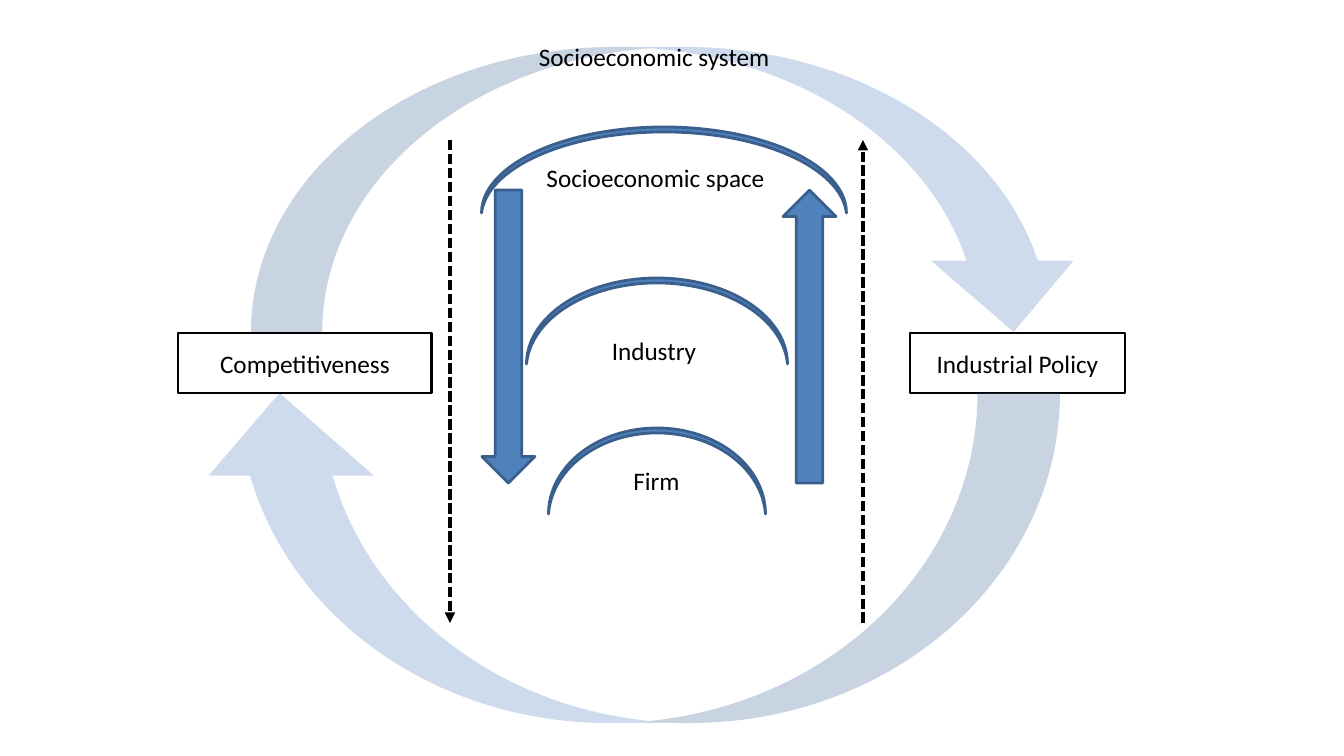
"""Builds a slide of the competitiveness and industrial policy cycle."""
from dataclasses import dataclass

from lxml.etree import SubElement
from pptx import Presentation
from pptx.dml.color import RGBColor
from pptx.enum.dml import MSO_LINE_DASH_STYLE as Dash
from pptx.enum.shapes import MSO_CONNECTOR as Connector, MSO_SHAPE as Shape
from pptx.enum.text import MSO_ANCHOR as Anchor, MSO_AUTO_SIZE as AutoSize, PP_ALIGN as Align
from pptx.oxml.ns import qn
from pptx.util import Emu, Pt


@dataclass(frozen=True)
class Theme:
    """Colours, font and sizes in points."""
    blue: str = "4F81BD"
    edge: str = "3A5F8C"
    ink: str = "000000"
    font: str = "Calibri"
    text_size: int = 18
    outline: float = 2
    dashes: float = 2.5
    cycle_opacity: int = 28


def px(length):
    """Turns whole pixels into EMU."""
    return Emu(round(length * 914400 / 100.8))


def write(frame, text, *, theme, align=Align.CENTER):
    """Writes one formatted paragraph into a text frame."""
    para = frame.paragraphs[0]
    para.alignment = align
    span = para.add_run()
    span.text = text
    span.font.name = theme.font
    span.font.size = Pt(theme.text_size)
    span.font.color.rgb = RGBColor.from_string(theme.ink)


class Canvas:
    """Draws the diagram elements on one slide."""

    def __init__(self, page, theme):
        self.page = page
        self.theme = theme

    def shape(self, kind, left, top, width, height, *, fill=None, line=None, turn=0):
        """Adds a preset shape."""
        box = self.page.shapes.add_shape(kind, px(left), px(top), px(width), px(height))
        box.shadow.inherit = False
        box.rotation = turn
        if fill:
            box.fill.solid()
            box.fill.fore_color.rgb = RGBColor.from_string(fill)
        else:
            box.fill.background()
        if line:
            box.line.color.rgb = RGBColor.from_string(line)
            box.line.width = Pt(self.theme.outline)
        else:
            box.line.fill.background()
        return box

    def arch(self, center, middle, span, rise=86):
        """Adds a thin moon turned into an arch."""
        moon = self.shape(Shape.MOON, center - rise / 2, middle - span / 2, rise, span,
                          fill=self.theme.blue, line=self.theme.edge, turn=90)
        moon.adjustments[0] = 0.057

    def block_arrow(self, left, turn):
        """Adds a solid vertical arrow."""
        self.shape(Shape.DOWN_ARROW, left, 190, 53, 293,
                   fill=self.theme.blue, line=self.theme.edge, turn=turn)

    def cycle_arrow(self, left, top, width, height, turn):
        """Adds a translucent curved arrow."""
        arrow = self.shape(Shape.CURVED_DOWN_ARROW, left, top, width, height,
                           fill=self.theme.blue, turn=turn)
        color = arrow.element.spPr.find(f"{qn('a:solidFill')}/{qn('a:srgbClr')}")
        SubElement(color, qn("a:alpha"), val=str(self.theme.cycle_opacity * 1000))

    def dashed_arrow(self, x, start, end):
        """Adds a dashed vertical line with an arrowhead at its end."""
        arrow = self.page.shapes.add_connector(Connector.STRAIGHT, px(x), px(start), px(x), px(end))
        arrow.line.color.rgb = RGBColor.from_string(self.theme.ink)
        arrow.line.width = Pt(self.theme.dashes)
        arrow.line.dash_style = Dash.SQUARE_DOT
        SubElement(arrow.line._get_or_add_ln(), qn("a:tailEnd"), type="triangle")
        SubElement(arrow.element.spPr, qn("a:effectLst"))

    def label(self, text, left, top, width, align=Align.CENTER):
        """Adds a text box of one line."""
        box = self.page.shapes.add_textbox(px(left), px(top), px(width), px(40))
        box.text_frame.word_wrap = False
        box.text_frame.auto_size = AutoSize.SHAPE_TO_FIT_TEXT
        write(box.text_frame, text, theme=self.theme, align=align)

    def framed_label(self, text, left, width):
        """Adds an outlined box with centred text."""
        box = self.shape(Shape.RECTANGLE, left, 333, width, 60, line=self.theme.ink)
        box.text_frame.vertical_anchor = Anchor.MIDDLE
        write(box.text_frame, text, theme=self.theme)


def main():
    """Builds and saves the deck."""
    deck = Presentation()
    deck.slide_width, deck.slide_height = px(1344), px(756)
    canvas = Canvas(deck.slides.add_slide(deck.slide_layouts[6]), Theme())

    for center, middle, span in ((657, 471, 217), (657, 321, 261), (664, 170, 365)):
        canvas.arch(center, middle, span)
    canvas.label("Firm", 623, 460, 67)
    canvas.label("Industry", 601, 330, 106)
    canvas.label("Socioeconomic space", 535, 157, 241)

    canvas.dashed_arrow(450, 140, 623)
    canvas.dashed_arrow(863, 623, 140)
    canvas.framed_label("Competitiveness", 178, 254)
    canvas.framed_label("Industrial Policy", 910, 215)

    canvas.cycle_arrow(251, 47, 834, 285, turn=0)
    canvas.cycle_arrow(197, 393, 863, 330, turn=180)
    canvas.label("Socioeconomic system", 529, 36, 253, align=Align.LEFT)
    canvas.block_arrow(482, turn=0)
    canvas.block_arrow(783, turn=180)

    deck.save("out.pptx")


if __name__ == "__main__":
    main()
